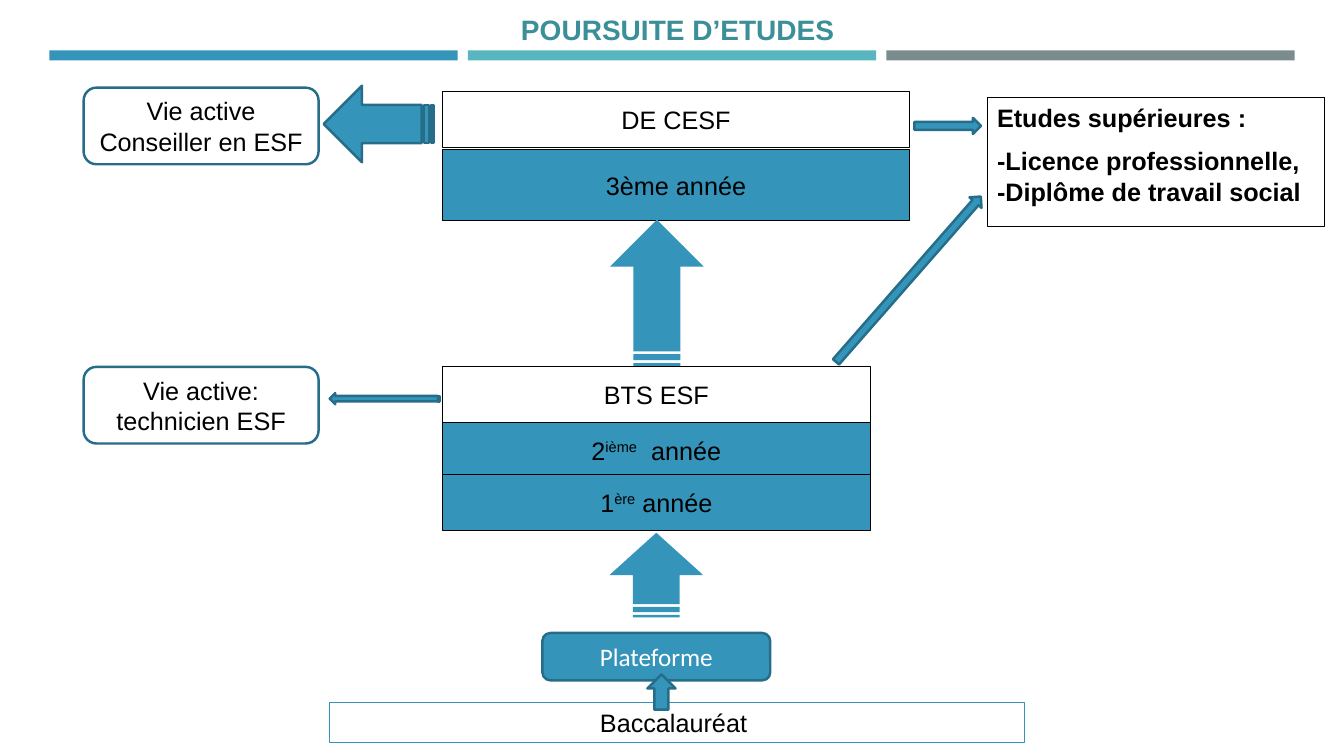
"""Build the slide that maps the study paths before and after the BTS ESF."""
from pptx import Presentation
from pptx.dml.color import RGBColor
from pptx.enum.dml import MSO_PATTERN as Pattern
from pptx.enum.shapes import MSO_SHAPE as Kind
from pptx.enum.text import MSO_ANCHOR as Anchor, PP_ALIGN as Align
from pptx.util import Emu, Pt

PX = 9144
BLUE = RGBColor(0x34, 0x94, 0xBA)
NAVY = RGBColor(0x26, 0x6D, 0x8A)
TEAL = RGBColor(0x58, 0xB6, 0xC0)
GREY = RGBColor(0x7A, 0x8C, 0x8E)
TITLE = RGBColor(0x3A, 0x8F, 0x98)
BLACK = RGBColor(0, 0, 0)
WHITE = RGBColor(255, 255, 255)


def px(*vals):
    return [Emu(val * PX) for val in vals]


def draw(slide, kind, box, fill=None, edge=None, width=0.75, turn=0):
    shape = slide.shapes.add_shape(kind, *px(*box))
    shape.shadow.inherit = False
    shape.rotation = turn
    if fill is None:
        shape.fill.background()
    else:
        shape.fill.solid()
        shape.fill.fore_color.rgb = fill
    if edge is None:
        shape.line.fill.background()
    else:
        shape.line.color.rgb = edge
        shape.line.width = Pt(width)
    return shape


def style(run, color=BLACK, size=18, bold=False, face="Arial"):
    font = run.font
    font.name, font.size, font.bold = face, Pt(size), bold
    font.color.rgb = color


def write(shape, text, align=Align.CENTER, anchor=Anchor.MIDDLE, wrap=True, **look):
    frame = shape.text_frame
    frame.text = text
    frame.word_wrap = wrap
    frame.vertical_anchor = anchor
    for para in frame.paragraphs:
        para.alignment = align
        for run in para.runs:
            style(run, **look)
    return frame


def level(slide, box, fill, text):
    shape = draw(slide, Kind.RECTANGLE, box, fill, BLACK)
    return write(shape, text, wrap=False)


def year(slide, box, num, suffix, rest):
    para = level(slide, box, BLUE, num).paragraphs[0]
    for text, base in ((suffix, "30000"), (rest, "0")):
        run = para.add_run()
        run.text = text
        style(run)
        run.font._element.set("baseline", base)


def pill(slide, box, text, fill=WHITE, **look):
    shape = draw(slide, Kind.ROUNDED_RECTANGLE, box, fill, NAVY, 1.75)
    write(shape, text, **look)


def arrow(slide, kind, box, turn=0):
    draw(slide, kind, box, BLUE, NAVY, 1.75, turn)


def rise(slide, box):
    fill = draw(slide, Kind.STRIPED_RIGHT_ARROW, box, BLUE, turn=270).fill
    fill.patterned()
    fill.pattern = Pattern.DARK_HORIZONTAL
    fill.fore_color.rgb = BLUE
    fill.back_color.rgb = WHITE


def main():
    deck = Presentation()
    deck.slide_width, deck.slide_height = px(1333, 750)
    slide = deck.slides.add_slide(deck.slide_layouts[6])

    for col, color in enumerate((BLUE, TEAL, GREY)):
        draw(slide, Kind.RECTANGLE, (49 + 415 * col, 50, 405, 10), color)
    title = slide.shapes.add_textbox(*px(215, 7, 922, 44))
    write(title, "POURSUITE D’ETUDES ", anchor=Anchor.TOP,
          color=TITLE, size=20, bold=True)

    bac = draw(slide, Kind.RECTANGLE, (327, 697, 689, 40), edge=BLUE)
    write(bac, "Baccalauréat ", anchor=Anchor.TOP)

    level(slide, (439, 364, 424, 55), WHITE, "BTS ESF")
    year(slide, (439, 419, 424, 55), "2", "ième", "  année")
    year(slide, (439, 471, 424, 55), "1", "ère", " année")
    level(slide, (439, 91, 463, 55), WHITE, "DE CESF")
    level(slide, (439, 148, 463, 71), BLUE, "3ème année")

    pill(slide, (83, 364, 233, 76), "Vie active: technicien ESF")
    pill(slide, (83, 87, 233, 76), "Vie active Conseiller en ESF")
    pill(slide, (538, 628, 226, 47), "Plateforme", BLUE, color=WHITE, face="Calibri")

    higher = draw(slide, Kind.RECTANGLE, (979, 97, 335, 128), edge=BLACK)
    frame = write(higher, "Etudes supérieures :\n-Licence professionnelle,\n"
                  "-Diplôme de travail social",
                  align=Align.LEFT, anchor=Anchor.TOP, bold=True)
    frame.paragraphs[1].space_before = Pt(9)

    rise(slide, (579, 244, 145, 93))
    rise(slide, (609, 524, 84, 93))
    arrow(slide, Kind.STRIPED_RIGHT_ARROW, (327, 390, 109, 11), 180)
    arrow(slide, Kind.STRIPED_RIGHT_ARROW, (321, 85, 109, 76), 180)
    arrow(slide, Kind.UP_ARROW, (893, 168, 16, 218), 41.2)
    arrow(slide, Kind.UP_ARROW, (642, 669, 28, 35))
    arrow(slide, Kind.RIGHT_ARROW, (907, 117, 66, 16))

    deck.save("out.pptx")


if __name__ == "__main__":
    main()
